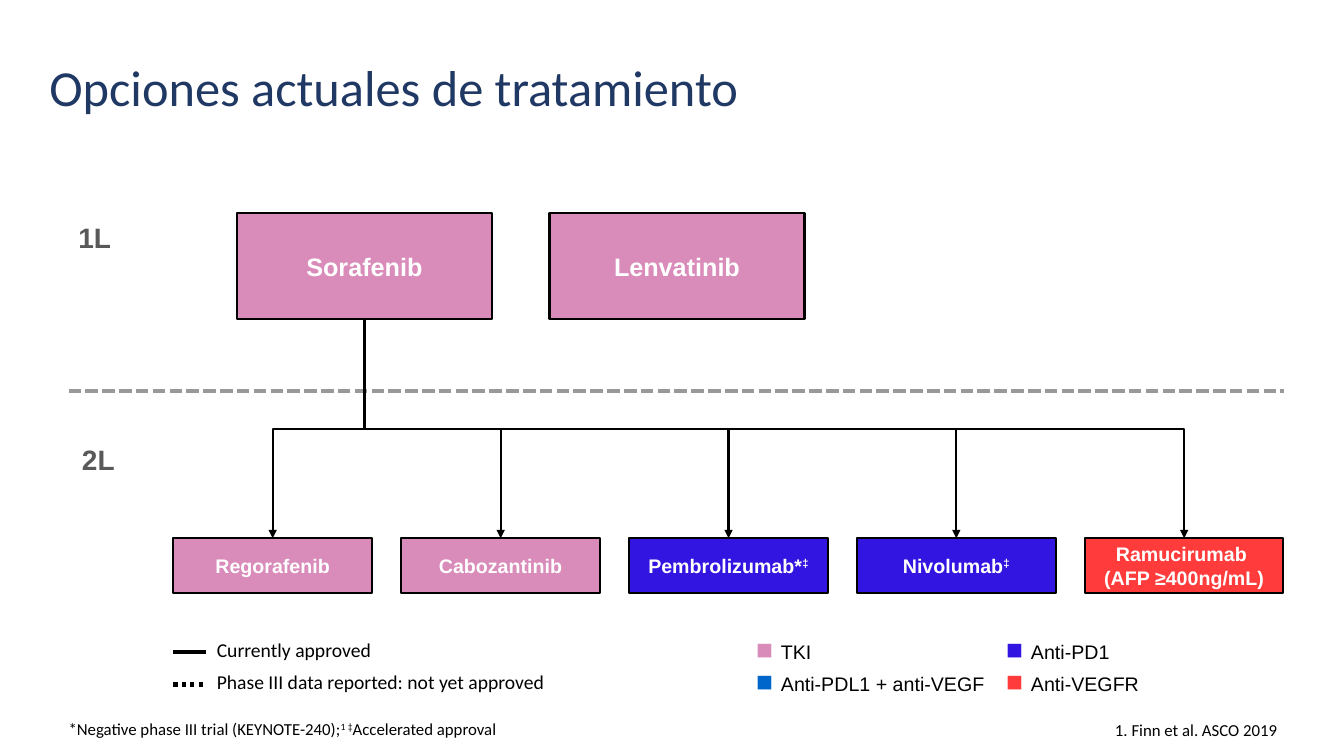
from lxml.etree import SubElement
from pptx import Presentation
from pptx.dml.color import RGBColor
from pptx.enum.dml import MSO_LINE
from pptx.enum.shapes import MSO_CONNECTOR, MSO_SHAPE
from pptx.enum.text import MSO_ANCHOR, MSO_AUTO_SIZE, PP_ALIGN
from pptx.oxml.ns import qn
from pptx.util import Pt

SCALE = 9144
PINK, BLUE, RED, SKY = "D98BB9", "3215E1", "FF3B3B", "0066CC"
BLACK, WHITE, GREY = "000000", "FFFFFF", "595959"


def px(size):
    """Turn px, a hundred to the inch, into EMU."""
    return round(size * SCALE)


def color(code):
    """Turn a hex string into a colour."""
    return RGBColor.from_string(code)


def style(run, size, font, ink, bold=False, base=0):
    """Format one run; base is its rise in percent."""
    run.font.size, run.font.name, run.font.bold = Pt(size), font, bold
    run.font.color.rgb = color(ink)
    if base:
        run._r.get_or_add_rPr().set("baseline", str(base * 1000))


def write(frame, *parts, align=PP_ALIGN.LEFT, space=1.0, anchor=MSO_ANCHOR.MIDDLE, **form):
    """Write strings, or pairs of string and own format, as one paragraph."""
    frame.word_wrap = True
    frame.vertical_anchor = anchor
    para = frame.paragraphs[0]
    para.alignment, para.line_spacing, para.space_before = align, space, Pt(0)
    for part in parts:
        text, own = (part, {}) if isinstance(part, str) else part
        for row, line in enumerate(text.split("\n")):
            if row:
                para.add_line_break()
            run = para.add_run()
            run.text = line
            style(run, **{**form, **own})


def place(shape, left, top, width, height):
    """Move and size a shape in px."""
    shape.left, shape.top = px(left), px(top)
    shape.width, shape.height = px(width), px(height)


def note(shape, area, *parts, **form):
    """Fill a body placeholder with a footnote without bullet."""
    place(shape, *area)
    frame = shape.text_frame
    frame.auto_size, frame.margin_bottom = MSO_AUTO_SIZE.NONE, 0
    write(frame, *parts, space=0.9, anchor=MSO_ANCHOR.BOTTOM,
          size=12, font="Calibri", ink=BLACK, **form)
    props = frame.paragraphs[0]._p.get_or_add_pPr()
    props.set("marL", "0")
    props.set("indent", "0")
    SubElement(props, qn("a:buNone"))


def label(slide, top, text):
    """Add the name of a treatment line."""
    shape = slide.shapes.add_textbox(px(39), px(top), px(117), px(48))
    write(shape.text_frame, text, align=PP_ALIGN.CENTER,
          size=20, font="Arial", ink=GREY, bold=True)


def box(slide, area, fill, size, *parts):
    """Add a drug box."""
    shape = slide.shapes.add_shape(MSO_SHAPE.RECTANGLE, *map(px, area))
    shape.shadow.inherit = False
    shape.fill.solid()
    shape.fill.fore_color.rgb = color(fill)
    shape.line.color.rgb, shape.line.width = color(BLACK), Pt(1.5)
    frame = shape.text_frame
    frame.margin_left = frame.margin_right = px(5)
    frame.margin_top = frame.margin_bottom = 0
    write(frame, *parts, align=PP_ALIGN.CENTER,
          size=size, font="Arial", ink=WHITE, bold=True)
    return shape


def link(slide, kind, ends, ink, width, dash=None):
    """Add a plain connector between two points in EMU."""
    line = slide.shapes.add_connector(kind, *ends)
    line.line.color.rgb, line.line.width = color(ink), Pt(width)
    if dash:
        line.line.dash_style = dash
    SubElement(line._element.spPr, qn("a:effectLst"))
    return line


def rule(slide, left, right, top, ink, dash=None):
    """Add a level line."""
    ends = map(px, (left, top, right, top))
    link(slide, MSO_CONNECTOR.STRAIGHT, ends, ink, 3, dash)


def arrow(slide, start, end):
    """Join the foot of one box to the head of another by a bent arrow."""
    left, top = start.left + start.width // 2, start.top + start.height
    right, low = end.left + end.width // 2, end.top
    line = link(slide, MSO_CONNECTOR.ELBOW, (left, top, right, low), BLACK, 1.5)
    line.begin_connect(start, 2)
    line.end_connect(end, 0)
    long, wide = low - top, abs(right - left)
    line.left, line.top = (left + right - long) // 2, (top + low - wide) // 2
    line.width, line.height = long, wide
    frame = line._element.spPr.find(qn("a:xfrm"))
    frame.set("rot", "16200000" if right > left else "5400000")
    frame.set("flipH", "1" if right > left else "0")
    frame.set("flipV", "0")
    SubElement(line.line._get_or_add_ln(), qn("a:tailEnd"), type="triangle")


def legend(slide, rows):
    """Add the key as a table of names and coloured squares."""
    table = slide.shapes.add_table(2, 3, *map(px, (205, 632, 1068, 64))).table
    table.first_row = table.horz_banding = False
    for col, width in zip(table.columns, (535, 248, 285)):
        col.width = px(width)
    for row, height, names in zip(table.rows, (31, 33), rows):
        row.height = px(height)
        for cell, (name, ink) in zip(row.cells, names):
            cell.fill.background()
            cell.margin_top = cell.margin_bottom = 0
            cell.vertical_anchor = MSO_ANCHOR.MIDDLE
            mark = [("■ ", {"size": 20, "ink": ink})] if ink else []
            write(cell.text_frame, *mark, name, space=0.7, size=14,
                  font="Arial" if ink else "Calibri", ink=BLACK)


def main():
    """Build the slide of treatment options."""
    deck = Presentation()
    deck.slide_width, deck.slide_height = px(1333), px(750)
    slide = deck.slides.add_slide(deck.slide_layouts[3])
    title, left, right = slide.placeholders
    place(title, 39, 34, 1218, 110)
    title.text_frame.auto_size = MSO_AUTO_SIZE.NONE
    write(title.text_frame, "Opciones actuales de tratamiento",
          space=0.9, size=36, font="Calibri", ink="203864")
    note(left, (58, 694, 687, 39), "*Negative phase III trial (KEYNOTE-240);",
         ("1 ‡", {"base": 30}), "Accelerated approval")
    note(right, (667, 692, 610, 42), "1. Finn et al. ASCO 2019", align=PP_ALIGN.RIGHT)

    rule(slide, 68, 1273, 388, "999999", MSO_LINE.SQUARE_DOT)
    label(slide, 211, "1L ")
    label(slide, 432, "2L")
    first = box(slide, (235, 211, 253, 106), PINK, 18, "Sorafenib")
    box(slide, (545, 211, 253, 106), PINK, 18, "Lenvatinib")
    mark = ("‡", {"base": 30})
    drugs = [
        (PINK, "Regorafenib"),
        (PINK, "Cabozantinib"),
        (BLUE, "Pembrolizumab*", mark),
        (BLUE, "Nivolumab", mark),
        (RED, "Ramucirumab \n(AFP ≥400ng/mL)"),
    ]
    for spot, (fill, *parts) in enumerate(drugs):
        drug = box(slide, (172 + 226 * spot, 534, 197, 54), fill, 14, *parts)
        arrow(slide, first, drug)

    rule(slide, 172, 204, 647, BLACK)
    rule(slide, 172, 204, 679, BLACK, MSO_LINE.ROUND_DOT)
    legend(slide, [
        [("Currently approved", None), ("TKI", PINK), ("Anti-PD1", BLUE)],
        [("Phase III data reported: not yet approved", None),
         ("Anti-PDL1 + anti-VEGF", SKY), ("Anti-VEGFR", RED)],
    ])
    deck.save("out.pptx")


if __name__ == "__main__":
    main()
